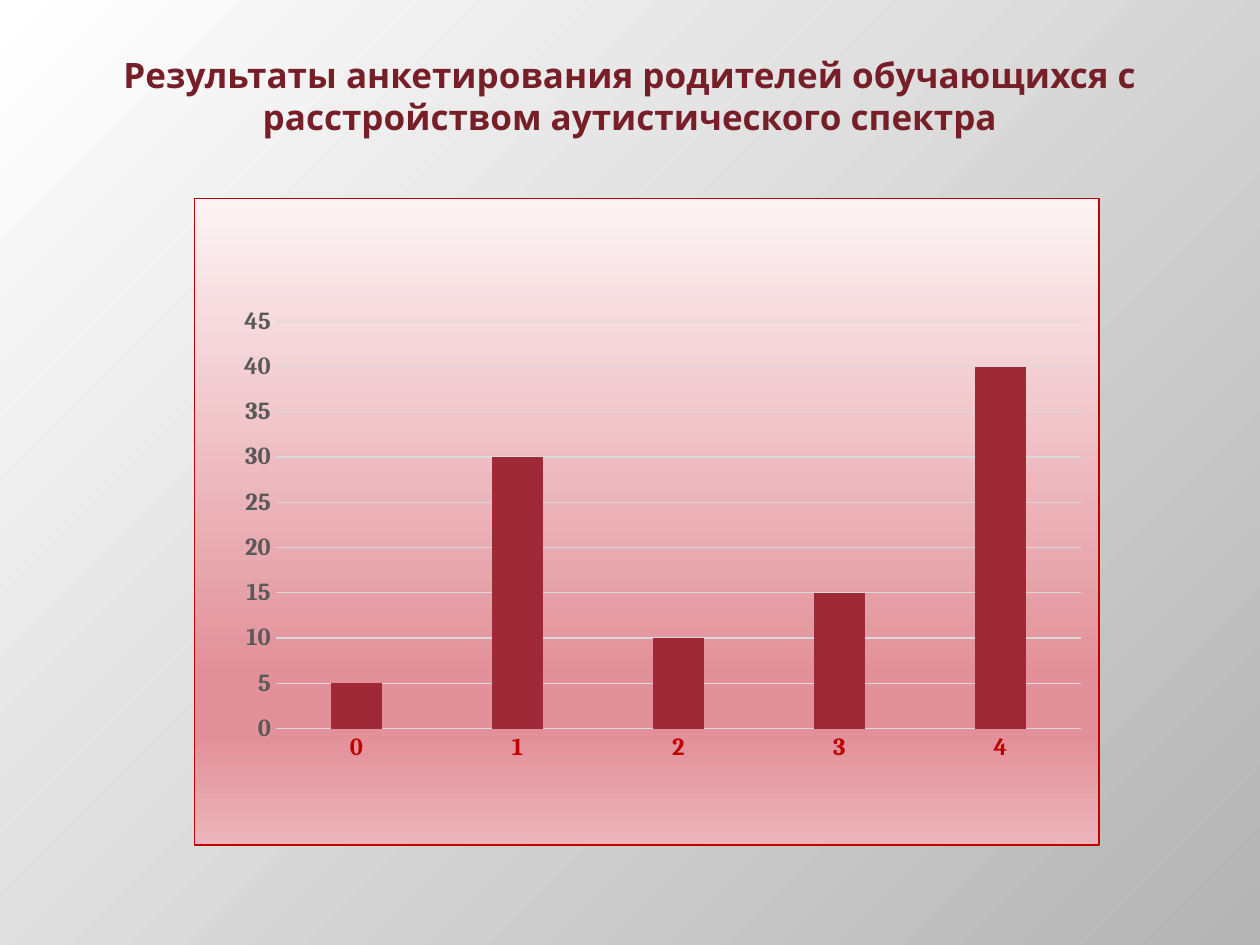
import dataclasses

import pptx
import pptx.chart.data
import pptx.dml.color
import pptx.enum.chart
import pptx.enum.text
import pptx.oxml
import pptx.oxml.ns
import pptx.util

COLORS = {
    "white": "FFFFFF",
    "silver": "B4B4B4",
    "title": "771F28",
    "blush": "FCF3F4",
    "rose": "E29099",
    "pink": "ECB5BB",
    "border": "C00000",
    "bar": "9F2936",
    "grid": "D9D9D9",
    "value": "595959",
    "black": "000000",
}
NAMESPACES = pptx.oxml.ns.nsdecls("a", "c")
SERIF = "Cambria"


@dataclasses.dataclass
class Stop:
    percent: int
    color: str


@dataclasses.dataclass
class AxisStyle:
    text_color: str
    line_color: str | None
    gridlines: bool


def rgb(name: str) -> pptx.dml.color.RGBColor:
    return pptx.dml.color.RGBColor.from_string(COLORS[name])


def gradient(stops: list[Stop], direction: str) -> str:
    marks = "".join(
        f'<a:gs pos="{stop.percent * 1000}"><a:srgbClr val="{COLORS[stop.color]}"/></a:gs>'
        for stop in stops
    )
    return f"<a:gradFill {NAMESPACES}><a:gsLst>{marks}</a:gsLst>{direction}</a:gradFill>"


def set_background(slide) -> None:
    slide.background.fill.solid()
    properties = slide.element.find(".//" + pptx.oxml.ns.qn("p:bgPr"))
    direction = '<a:path path="circle"><a:fillToRect r="100000" b="100000"/></a:path>'
    fill = gradient([Stop(0, "white"), Stop(100, "silver")], direction)
    properties.replace(properties[0], pptx.oxml.parse_xml(fill))


def set_title(title, text: str) -> None:
    title.left, title.top = pptx.util.Cm(1.27), pptx.util.Cm(0.76)
    title.width, title.height = pptx.util.Cm(22.86), pptx.util.Cm(3.18)
    frame = title.text_frame
    frame.word_wrap = True
    frame.vertical_anchor = pptx.enum.text.MSO_ANCHOR.MIDDLE
    para = frame.paragraphs[0]
    para.alignment = pptx.enum.text.PP_ALIGN.CENTER
    span = para.add_run()
    span.text = text
    para.add_line_break()
    for font in (span.font, para.font):
        font.name = "Open Sans"
        font.size = pptx.util.Pt(20)
        font.bold = True
        font.color.rgb = rgb("title")
    line_break = para._p.find(pptx.oxml.ns.qn("a:br"))
    line_break.append(pptx.oxml.parse_xml(f'<a:rPr {NAMESPACES} sz="2000" b="1"/>'))


def style_line(line, color: str) -> None:
    line.color.rgb = rgb(color)
    line.width = pptx.util.Pt(0.75)


def style_axis(axis, style: AxisStyle) -> None:
    axis.major_tick_mark = pptx.enum.chart.XL_TICK_MARK.NONE
    axis.minor_tick_mark = pptx.enum.chart.XL_TICK_MARK.NONE
    font = axis.tick_labels.font
    font.name = SERIF
    font.size = pptx.util.Pt(14)
    font.bold = True
    font.color.rgb = rgb(style.text_color)
    if style.line_color:
        style_line(axis.format.line, style.line_color)
    else:
        axis.format.line.fill.background()
    axis.has_major_gridlines = style.gridlines
    if style.gridlines:
        style_line(axis.major_gridlines.format.line, "grid")


def set_chart_area(chart) -> None:
    stops = [Stop(0, "blush"), Stop(74, "rose"), Stop(83, "rose"), Stop(100, "pink")]
    fill = gradient(stops, '<a:lin ang="5400000" scaled="0"/>')
    area = pptx.oxml.parse_xml(
        f'<c:spPr {NAMESPACES}>{fill}<a:ln w="9525"><a:solidFill>'
        f'<a:srgbClr val="{COLORS["border"]}"/></a:solidFill></a:ln></c:spPr>'
    )
    chart.element.find(pptx.oxml.ns.qn("c:chart")).addnext(area)


def set_plot_layout(chart, left: float, top: float, width: float, height: float) -> None:
    plot_area = chart.element.find(".//" + pptx.oxml.ns.qn("c:plotArea"))
    for old in plot_area.findall(pptx.oxml.ns.qn("c:layout")):
        plot_area.remove(old)
    places = "".join(
        f'<c:{tag} val="{value}"/>'
        for tag, value in zip("xywh", (left, top, width, height))
    )
    plot_area.insert(0, pptx.oxml.parse_xml(
        f'<c:layout {NAMESPACES}><c:manualLayout><c:layoutTarget val="inner"/>'
        f'<c:xMode val="edge"/><c:yMode val="edge"/>{places}</c:manualLayout></c:layout>'
    ))


def add_survey_chart(slide) -> None:
    data = pptx.chart.data.CategoryChartData()
    data.categories = [str(score) for score in range(5)]
    data.add_series("Series 1", (5, 30, 10, 15, 40))
    chart = slide.shapes.add_chart(
        pptx.enum.chart.XL_CHART_TYPE.COLUMN_CLUSTERED,
        pptx.util.Cm(3.91), pptx.util.Cm(3.99),
        pptx.util.Cm(18.26), pptx.util.Cm(13.06), data,
    ).chart
    chart.has_title = False
    chart.has_legend = False
    chart.font.name = SERIF
    chart.font.size = pptx.util.Pt(10)
    chart.font.color.rgb = rgb("black")
    plot = chart.plots[0]
    plot.gap_width = 219
    plot.overlap = -27
    plot.vary_by_categories = False
    bars = plot.series[0].format.fill
    bars.solid()
    bars.fore_color.rgb = rgb("bar")
    style_axis(chart.category_axis, AxisStyle("border", "grid", False))
    style_axis(chart.value_axis, AxisStyle("value", None, True))
    chart.value_axis.minimum_scale = 0
    chart.value_axis.maximum_scale = 45
    chart.value_axis.major_unit = 5
    set_chart_area(chart)
    set_plot_layout(chart, 0.09, 0.19, 0.89, 0.63)


def main() -> None:
    deck = pptx.Presentation()
    deck.slide_width, deck.slide_height = pptx.util.Cm(25.4), pptx.util.Cm(19.05)
    slide = deck.slides.add_slide(deck.slide_layouts.get_by_name("Title Only"))
    set_background(slide)
    set_title(
        slide.shapes.title,
        "Результаты анкетирования родителей обучающихся с "
        "расстройством аутистического спектра",
    )
    add_survey_chart(slide)
    deck.save("out.pptx")


if __name__ == "__main__":
    main()
